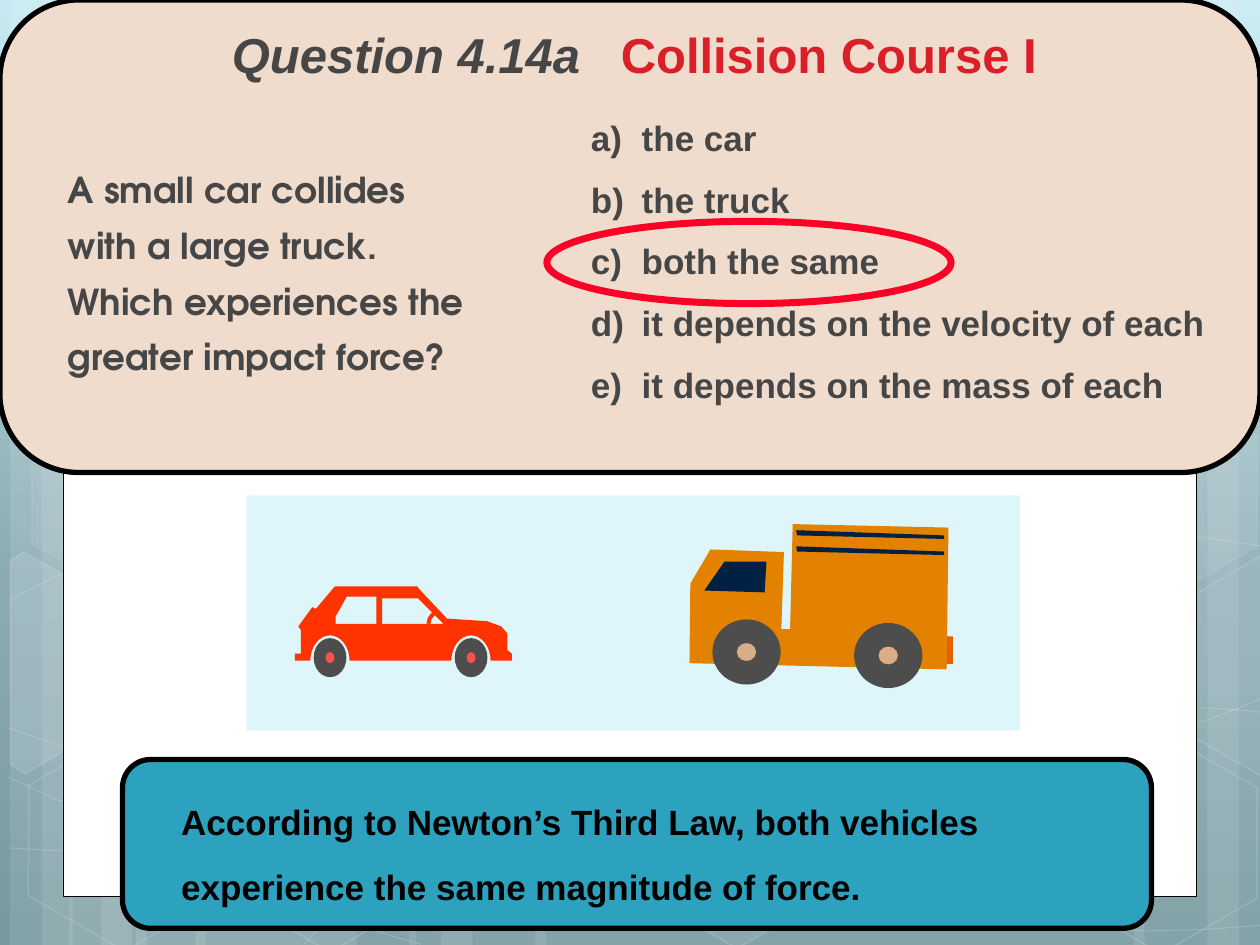
"""Build the collision question slide with its vehicles and answer."""
from copy import deepcopy
from dataclasses import dataclass
from math import cos, pi, sin

from lxml import etree
from pptx import Presentation
from pptx.dml.color import RGBColor
from pptx.enum.shapes import MSO_SHAPE
from pptx.enum.text import MSO_ANCHOR, MSO_AUTO_SIZE, PP_ALIGN
from pptx.oxml.ns import qn
from pptx.util import Pt

RECT = MSO_SHAPE.RECTANGLE
ROUND = MSO_SHAPE.ROUNDED_RECTANGLE
OVAL = MSO_SHAPE.OVAL
HEX = MSO_SHAPE.HEXAGON
TOP, MIDDLE = MSO_ANCHOR.TOP, MSO_ANCHOR.MIDDLE
LEFT, CENTER = PP_ALIGN.LEFT, PP_ALIGN.CENTER
FIXED = MSO_AUTO_SIZE.NONE
WHITE, BLACK, GREY, RED = "FFFFFF", "000000", "464646", "DA1F28"
NAVY, TIRE, CAR, TRUCK = "002144", "4D4D4D", "FF3300", "E28200"


@dataclass
class Look:
    fill: str = ""
    line: str = ""
    width: float = 0
    alpha: int = 100
    fade: int = 100


@dataclass
class Wheel:
    x: float
    y: float
    size: tuple
    hub: tuple
    color: str


@dataclass
class Cell:
    x: float
    y: float
    fill: int
    line: int


BARS = [(77.8, 126), (5.8, 36), (23.8, 60), (111.6, 126), (39.6, 36), (57.6, 60),
        (528, 126), (690, 36), (648, 60), (306, 222), (234, 36), (252, 60)]
CURVES = [
    [(5, 484.5), (44, 487, 83, 489, 137, 488), (191, 487.5, 258, 486, 330, 479),
     (402, 471.5, 504, 458, 570, 444), (636, 430.5, 703.5, 409, 725, 396.5)],
    [(5, 343.5), (26, 332, 47, 321, 87, 310), (128, 299.5, 186.5, 283.5, 250, 278.5),
     (314, 273.5, 392, 273, 471, 278.5), (550, 284.5, 682, 307, 725, 312.5)],
    [(4.5, 444), (91.5, 484, 178, 523.5, 240.5, 539.5)],
    [(5, 416), (27.5, 424, 50.5, 432, 92, 443.5), (134, 454.5, 196.5, 472.5, 257, 484.5),
     (317, 497, 392.5, 510, 452, 517), (512, 525, 576, 528, 614, 530),
     (651.5, 533, 661.5, 531.5, 680.5, 531.5), (699, 530.5, 712, 529.5, 725, 528.5)],
    [(174, 539.5), (187, 525, 200, 510.5, 217.5, 497.5), (234.5, 484.5, 259, 470, 279.5, 460),
     (299.5, 450, 312, 445.5, 338.5, 438.5), (364, 431, 412.5, 421, 438, 416),
     (463.5, 411, 467.5, 411, 489.5, 409.5), (512, 407.5, 547, 405.5, 571.5, 404.5),
     (597, 404, 638, 404.5, 686, 404.5), (702, 405, 718, 406.5, 724, 407.5)],
]
CELLS = [Cell(358, 424, 6, 12), Cell(8, 425.5, 0, 12), Cell(10, 224.5, 7, 8),
         Cell(125.5, 426, 0, 12), Cell(600.5, 427, 0, 12), Cell(600.5, 226, 7, 8)]
EDGES = [
    (10, [(6, 320.5), (13.5, 315.5), (69, 347), (68.5, 410.5), (14.5, 442), (6, 437)]),
    (4, [(667, 349), (720.5, 317.5), (726.5, 321), (726.5, 441.5), (721.5, 444), (667, 412.5)]),
]
CAB = [(394, 379), (541, 382.5), (542, 301.5), (453, 299.5), (451.5, 359.5),
       (446.5, 359.5), (448, 315.5), (406, 314), (394.5, 333.5)]
GLASS = [(402.5, 337.5), (437, 338.5), (438, 321), (414, 321)]
STRIPE = [(455, 303), (455.5, 306), (539.5, 308), (539.5, 306)]
REAR = [(168.5, 377.5), (168.5, 373.5), (172, 373.5), (172, 360), (170.5, 358), (178.5, 347),
        (181.5, 348.5), (191.5, 356.5), (253.5, 356.5), (238.5, 341.5), (238.5, 335.5),
        (255.5, 353.5), (278.5, 355), (286.5, 358), (290, 362), (290, 371.5),
        (292.5, 373.5), (292.5, 377.5)]
ROOF = [(238.5, 335.5), (238.5, 341.5), (218, 341.5), (218, 356.5), (215.5, 356.5),
        (215.5, 340.5), (198, 340.5), (191.5, 352), (191.5, 356.5), (180.5, 348.5),
        (191.5, 335.5)]
STEER = [(248.4, 350), (247, 351.5), (245.5, 353.5), (244.8, 356.5)]
WHEELS = [Wheel(x, y, (39, 37.2), (11, 10.2), "DBAD87") for x, y in ((426.6, 372.6), (507.6, 374.6))]
WHEELS += [Wheel(x, 375.8, (18.7, 22.3), (5, 6.2), "FF5050") for x in (269.2, 188.6)]
CHOICES = ["a)\tthe car", "b)\tthe truck", "c)\tboth the same",
           "d)\tit depends on the velocity of each", "e)\tit depends on the mass of each"]


def tint(code: str) -> RGBColor:
    return RGBColor.from_string(code)


def paint(fill, code: str, alpha: int) -> None:
    if not code or not alpha:
        fill.background()
        return
    fill.solid()
    fill.fore_color.rgb = tint(code)
    if alpha < 100:
        solid = fill._xPr.find(qn("a:solidFill"))
        etree.SubElement(solid[0], qn("a:alpha"), val=str(alpha * 1000))


def dress(shape, look: Look):
    shape.shadow.inherit = False
    paint(shape.fill, look.fill, look.alpha)
    paint(shape.line.fill, look.line, look.fade)
    if look.line:
        shape.line.width = Pt(look.width)
    return shape


def place(shape, box: tuple) -> None:
    shape.left, shape.top, shape.width, shape.height = map(Pt, box)


def add(slide, kind, box: tuple, look: Look):
    return dress(slide.shapes.add_shape(kind, *map(Pt, box)), look)


def trace(slide, dots: list, look: Look, close: bool = True):
    ends = [(Pt(x), Pt(y)) for x, y in dots]
    pen = slide.shapes.build_freeform(*ends[0])
    pen.add_line_segments(ends[1:], close=close)
    return dress(pen.convert_to_shape(), look)


def bend(curve: list, steps: int = 12) -> list:
    dots = [curve[0]]
    for a, b, c, d, e, f in curve[1:]:
        x, y = dots[-1]
        for t in (i / steps for i in range(1, steps + 1)):
            u = 1 - t
            mix = (u ** 3, 3 * u * u * t, 3 * u * t * t, t ** 3)
            dots.append(tuple(sum(m * v for m, v in zip(mix, row))
                              for row in ((x, a, c, e), (y, b, d, f))))
    return dots


def arch(x: float, y: float = 377.5, wide: float = 11.2, high: float = 14.4) -> list:
    return [(x + wide * cos(pi * i / 16), y - high * sin(pi * i / 16)) for i in range(17)]


def spin(slide, wheel: Wheel) -> None:
    for (w, h), code in ((wheel.size, TIRE), (wheel.hub, wheel.color)):
        add(slide, OVAL, (wheel.x - w / 2, wheel.y - h / 2, w, h), Look(code))


def write(shape, lines: list, *, size: float, font: str = "Arial", code: str = GREY,
          align=LEFT, anchor=TOP, pitch: float = 1, after: float = 0,
          left: float = 0, hang: float = 0) -> None:
    frame = shape.text_frame
    frame.word_wrap, frame.auto_size, frame.vertical_anchor = True, FIXED, anchor
    for i, line in enumerate(lines):
        para = frame.add_paragraph() if i else frame.paragraphs[0]
        para.alignment, para.line_spacing = align, pitch
        para.space_before, para.space_after = Pt(0), Pt(after)
        props = para._p.get_or_add_pPr()
        props.set("marL", str(Pt(left)))
        props.set("indent", str(Pt(-hang)))
        etree.SubElement(props, qn("a:buNone"))
        for text, hue, slant in [(line, code, False)] if isinstance(line, str) else line:
            run = para.add_run()
            run.text = text
            run.font.name, run.font.size = font, Pt(size)
            run.font.bold, run.font.italic = True, slant
            run.font.color.rgb = tint(hue)


def shade(slide) -> None:
    fill = slide.background.fill
    fill.gradient()
    fill.gradient_angle = 270
    stops = slide.element.find(".//" + qn("a:gsLst"))
    stops.append(deepcopy(stops[0]))
    for stop, (spot, code) in zip(fill.gradient_stops,
                                  ((0, "C7EAF2"), (0.62, "8BABB3"), (1, "7799A0"))):
        stop.position, stop.color.rgb = spot, tint(code)


def scene(slide) -> None:
    for x, w in BARS:
        add(slide, RECT, (x, 0, w, 540), Look(WHITE, alpha=10))
    for curve in CURVES:
        trace(slide, bend(curve), Look("", WHITE, 0.5, fade=20), False)
    for cell in CELLS:
        tile = add(slide, HEX, (cell.x, cell.y, 126, 109.5),
                   Look(WHITE, WHITE, 1, cell.fill, cell.line))
        tile.adjustments[0], tile.rotation = 0.285, 30
    for alpha, dots in EDGES:
        trace(slide, dots, Look(WHITE, WHITE, 1, alpha, 12))
    add(slide, RECT, (36, 26, 648, 486.5), Look(WHITE, BLACK, 0.5))


def drive(slide) -> None:
    add(slide, RECT, (141, 283, 442, 134.5), Look("DEF5FA"))
    add(slide, RECT, (536, 363.6, 8.6, 15.8), Look("E26300"))
    trace(slide, CAB, Look(TRUCK))
    for dots in (GLASS, STRIPE, [(x, y + 9.2) for x, y in STRIPE]):
        trace(slide, dots, Look(NAVY))
    trace(slide, arch(269.2) + arch(188.6) + REAR, Look(CAR))
    trace(slide, STEER, Look("", CAR, 2.25), False)
    trace(slide, ROOF, Look(CAR, CAR, 0.75))
    for wheel in WHEELS:
        spin(slide, wheel)


def main() -> None:
    deck = Presentation()
    deck.slide_width, deck.slide_height = Pt(720), Pt(540)
    slide = deck.slides.add_slide(deck.slide_layouts[3])
    title, ask, picks = slide.placeholders
    tree = title.element.getparent()
    shade(slide)
    scene(slide)
    add(slide, ROUND, (0, 0, 720, 270), Look("EFDCCD", BLACK, 3))
    tree.append(title.element)
    place(title, (73.5, 0, 578, 66))
    write(title, [[("Question 4.14a   ", GREY, True), ("Collision Course I", RED, False)]],
          size=28, align=CENTER, anchor=MIDDLE, pitch=0.9)
    add(slide, OVAL, (312.5, 126.5, 231, 47), Look("", "FC0128", 4))
    tree.extend([ask.element, picks.element])
    place(ask, (0, 85, 283, 162))
    write(ask, ["A small car collides with a large truck. Which experiences the greater impact force?"],
          size=20.4, font="TeX Gyre Adventor", pitch=1.3, left=31.5)
    place(picks, (330.5, 63, 389.5, 175))
    write(picks, CHOICES, size=20, after=11.2, left=29, hang=29)
    add(slide, ROUND, (70, 434, 588, 96.5), Look("2DA2BF", BLACK, 3))
    note = slide.shapes.add_textbox(*map(Pt, (65, 440.5, 606, 99.5)))
    write(note, ["According to Newton’s Third Law, both vehicles experience the same magnitude of force."],
          size=20, code=BLACK, pitch=1.55, left=31.5)
    drive(slide)
    deck.save("out.pptx")


if __name__ == "__main__":
    main()
